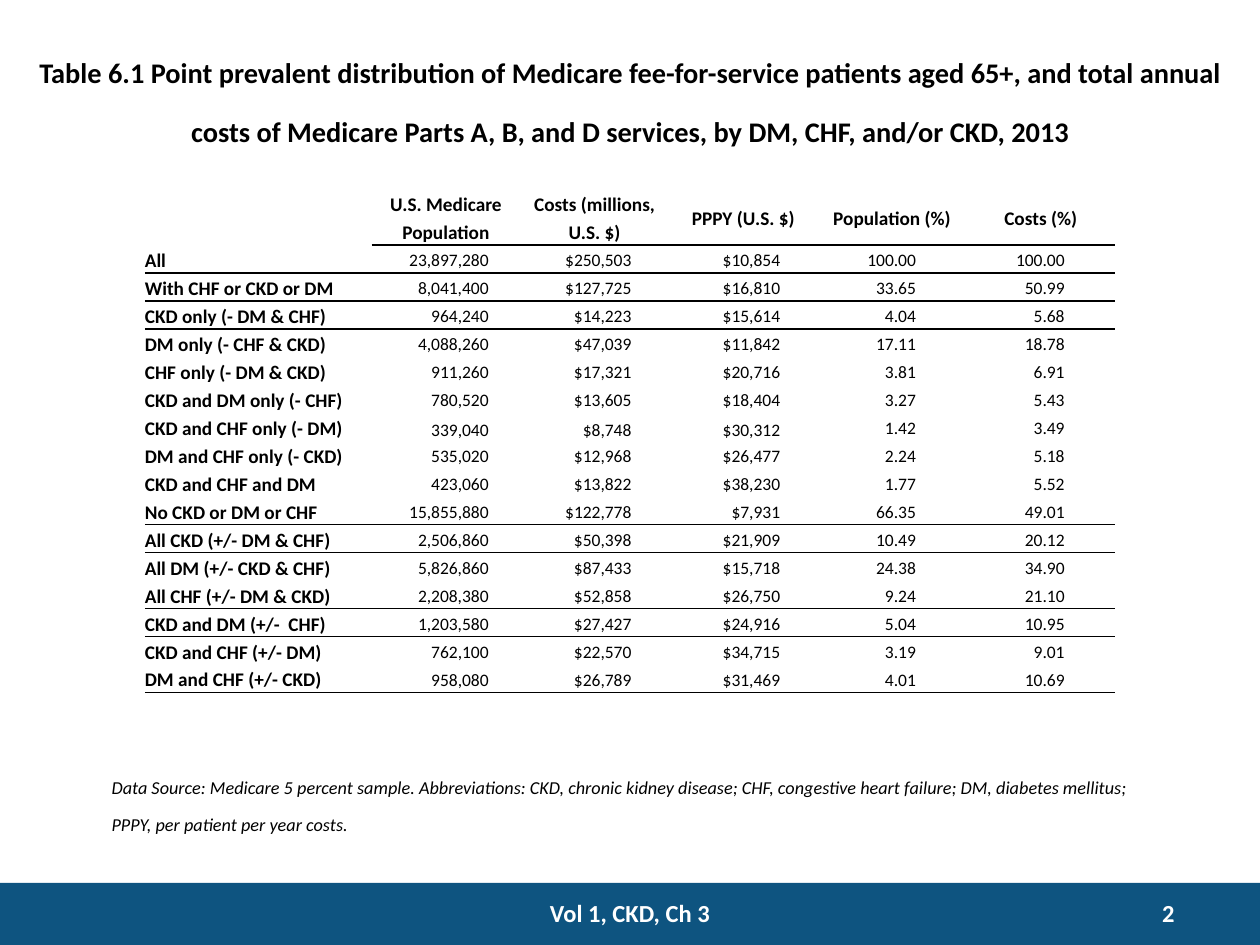
from lxml.etree import SubElement
from pptx import Presentation
from pptx.dml.color import RGBColor
from pptx.enum.shapes import MSO_SHAPE
from pptx.enum.text import MSO_ANCHOR, MSO_AUTO_SIZE, PP_ALIGN
from pptx.oxml.ns import qn
from pptx.util import Cm, Pt

FONT = "Calibri"
HUES = {"ink": "000000", "bar": "0E5480", "light": "FFFFFF"}
PLAIN = "{2D5ABB26-0587-4C30-8999-92F81FD0307C}"
TITLE = ("Table 6.1 Point prevalent distribution of Medicare fee-for-service patients "
         "aged 65+, and total annual costs of Medicare Parts A, B, and D services, "
         "by DM, CHF, and/or CKD, 2013")
NOTE = ("Data Source: Medicare 5 percent sample. Abbreviations: CKD, chronic kidney "
        "disease; CHF, congestive heart failure; DM, diabetes mellitus; PPPY, per "
        "patient per year costs.")
HEADS = ["", "U.S. Medicare Population", "Costs (millions, U.S. $)",
         "PPPY (U.S. $)", "Population (%)", "Costs (%)"]
ROWS = [
    ("All", "23,897,280", "$250,503", "$10,854", "100.00", "100.00"),
    ("With CHF or CKD or DM", "8,041,400", "$127,725", "$16,810", "33.65", "50.99"),
    ("CKD only (- DM & CHF)", "964,240", "$14,223", "$15,614", "4.04", "5.68"),
    ("DM only (- CHF & CKD)", "4,088,260", "$47,039", "$11,842", "17.11", "18.78"),
    ("CHF only (- DM & CKD)", "911,260", "$17,321", "$20,716", "3.81", "6.91"),
    ("CKD and DM only (- CHF)", "780,520", "$13,605", "$18,404", "3.27", "5.43"),
    ("CKD and CHF only (- DM)", "339,040", "$8,748", "$30,312", "1.42", "3.49"),
    ("DM and CHF only (- CKD)", "535,020", "$12,968", "$26,477", "2.24", "5.18"),
    ("CKD and CHF and DM", "423,060", "$13,822", "$38,230", "1.77", "5.52"),
    ("No CKD or DM or CHF", "15,855,880", "$122,778", "$7,931", "66.35", "49.01"),
    ("All CKD (+/- DM & CHF)", "2,506,860", "$50,398", "$21,909", "10.49", "20.12"),
    ("All DM (+/- CKD & CHF)", "5,826,860", "$87,433", "$15,718", "24.38", "34.90"),
    ("All CHF (+/- DM & CKD)", "2,208,380", "$52,858", "$26,750", "9.24", "21.10"),
    ("CKD and DM (+/-  CHF)", "1,203,580", "$27,427", "$24,916", "5.04", "10.95"),
    ("CKD and CHF (+/- DM)", "762,100", "$22,570", "$34,715", "3.19", "9.01"),
    ("DM and CHF (+/- CKD)", "958,080", "$26,789", "$31,469", "4.01", "10.69"),
]
INSETS = [0, 0.64, 0.76, 0.76, 1.02, 1.02]
RULED = {0, 1, 2, 10, 13, 16}
LOW = {(7, 1), (7, 2), (7, 3)}


def write(frame, text, size, align, hue="ink", bold=False, italic=False, rise=0):
    """Fill the first paragraph of a frame with one formatted run."""
    para = frame.paragraphs[0]
    para.alignment = align
    run = para.add_run()
    run.text = text
    font = run.font
    font.name, font.size, font.bold, font.italic = FONT, Pt(size), bold, italic
    font.color.rgb = RGBColor.from_string(HUES[hue])
    if rise:
        run._r.get_or_add_rPr().set("baseline", str(rise * 1000))
    return para


def add_text(slide, box, text, size, align, **style):
    """Add a wrapping text box with one run."""
    frame = slide.shapes.add_textbox(*map(Cm, box)).text_frame
    frame.word_wrap = True
    write(frame, text, size, align, **style)
    return frame


def add_title(slide, box):
    """Place and format the title placeholder."""
    shape = slide.shapes.title
    shape.left, shape.top, shape.width, shape.height = map(Cm, box)
    frame = shape.text_frame
    frame.vertical_anchor = MSO_ANCHOR.TOP
    frame.auto_size = MSO_AUTO_SIZE.SHAPE_TO_FIT_TEXT
    write(frame, TITLE, 28, PP_ALIGN.CENTER, bold=True, rise=30)


def add_note(slide, box):
    """Add the source note below the table."""
    frame = add_text(slide, box, NOTE, 18, PP_ALIGN.LEFT, italic=True, rise=30)
    frame.auto_size = MSO_AUTO_SIZE.SHAPE_TO_FIT_TEXT


def rule(cell, side):
    """Draw a one-point border on the given side of a cell."""
    line = SubElement(cell._tc.get_or_add_tcPr(), qn(f"a:{side}"), w=str(Pt(1)))
    fill = SubElement(line, qn("a:solidFill"))
    SubElement(fill, qn("a:srgbClr"), val=HUES["ink"])


def fill_cell(cell, row, col, text):
    """Format one table cell by its row and column."""
    cell.margin_left = cell.margin_top = cell.margin_bottom = 0
    cell.margin_right = Cm(INSETS[col] if row else 0)
    cell.vertical_anchor = MSO_ANCHOR.BOTTOM if (row, col) in LOW else MSO_ANCHOR.MIDDLE
    if row - 1 in RULED and (row > 1 or col):
        rule(cell, "lnT")
    if row in RULED and (row or col):
        rule(cell, "lnB")
    cell.fill.background()
    if text:
        label = row == 0 or col == 0
        side = PP_ALIGN.RIGHT if col else PP_ALIGN.LEFT
        para = write(cell.text_frame, text, 11 if label else 10,
                     side if row else PP_ALIGN.CENTER, bold=label)
        para.line_spacing = 1.15


def add_costs(slide, box):
    """Add the cost table, with a header two rows high."""
    left, top, width, height = map(Cm, box)
    data = [HEADS, *ROWS]
    table = slide.shapes.add_table(len(data), len(HEADS), left, top, width, height).table
    table.first_row = table.horz_banding = False
    table._tbl.tblPr.find(qn("a:tableStyleId")).text = PLAIN
    first = Cm(4.57)
    for col, item in enumerate(table.columns):
        item.width = (width - first) // (len(HEADS) - 1) if col else first
    unit = height // (len(data) + 1)
    for row, texts in enumerate(data):
        table.rows[row].height = unit if row else 2 * unit
        for col, text in enumerate(texts):
            fill_cell(table.cell(row, col), row, col, text)


def add_foot(slide, box):
    """Add the bottom bar with chapter and page number."""
    left, top, width, height = box
    bar = slide.shapes.add_shape(MSO_SHAPE.RECTANGLE, *map(Cm, box))
    bar.shadow.inherit = False
    bar.fill.solid()
    bar.fill.fore_color.rgb = RGBColor.from_string(HUES["bar"])
    bar.line.fill.background()
    wide = 5.5
    add_text(slide, (left + (width - wide) / 2, top + 0.18, wide, 0.84),
             "Vol 1, CKD, Ch 3", 14, PP_ALIGN.CENTER, hue="light", bold=True)
    add_text(slide, (left + width - 4.01, top + 0.18, 2.54, 0.76),
             "2", 14, PP_ALIGN.RIGHT, hue="light", bold=True)


def main():
    """Build and save the slide."""
    deck = Presentation()
    deck.slide_width, deck.slide_height = Cm(25.4), Cm(19.05)
    slide = deck.slides.add_slide(deck.slide_layouts[5])
    add_foot(slide, (0, 17.8, 25.4, 1.25))
    add_note(slide, (2, 15.44, 21.4, 1.27))
    add_title(slide, (0, 0.86, 25.4, 1.85))
    add_costs(slide, (2.92, 3.81, 19.56, 10.16))
    deck.save("out.pptx")


if __name__ == "__main__":
    main()
